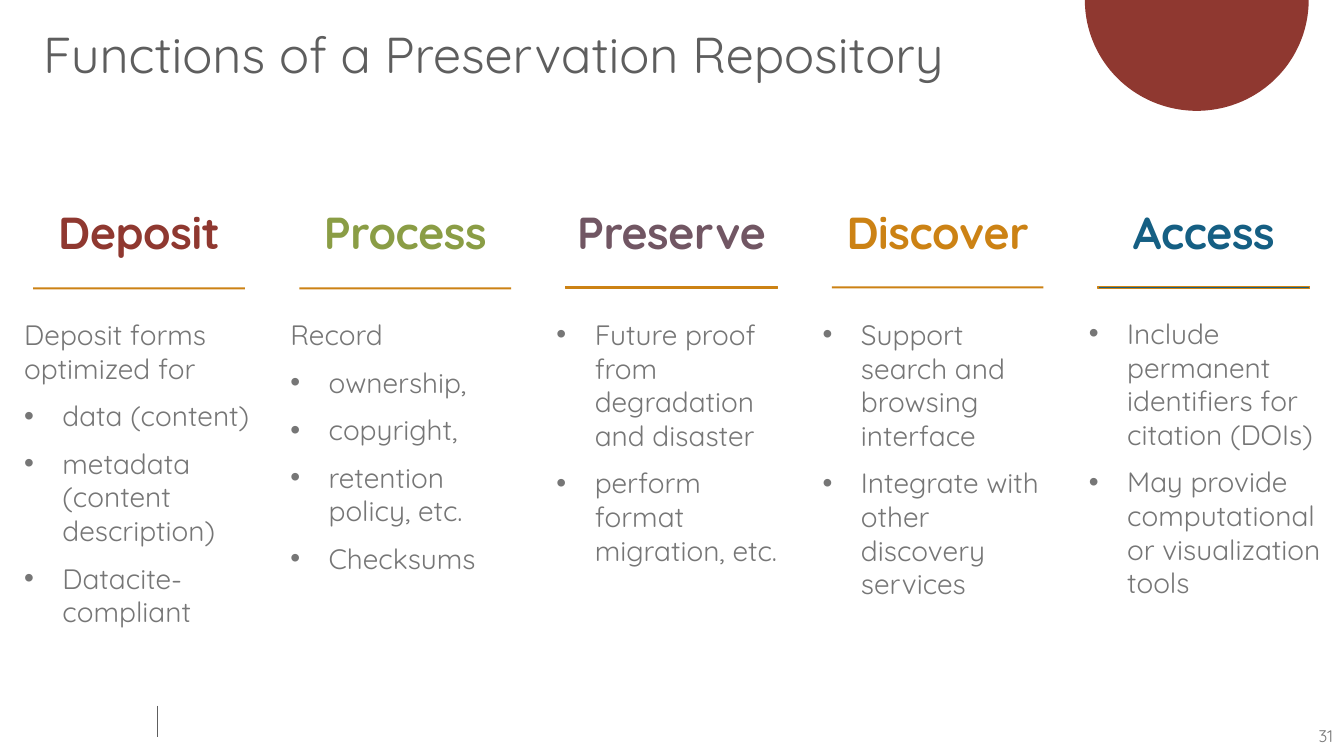
from math import cos, pi, sin

from lxml.etree import SubElement
from pptx import Presentation
from pptx.dml.color import RGBColor
from pptx.enum.shapes import MSO_CONNECTOR, MSO_SHAPE
from pptx.enum.text import MSO_ANCHOR, PP_ALIGN
from pptx.oxml.ns import qn
from pptx.util import Pt

# Content: a leading "•" marks a bulleted line
TITLE = "Functions of a Preservation Repository"
PAGE_NUMBER = "31"
COLUMNS = [
    {"heading": "Deposit", "color": "red", "rule_top": 285, "outlined": False,
     "lines": ["Deposit forms optimized for", "•data (content)",
               "•metadata (content description)", "•Datacite-compliant"]},
    {"heading": "Process", "color": "green", "rule_top": 285, "outlined": False,
     "lines": ["Record", "•ownership,", "•copyright,",
               "•retention policy, etc.", "•Checksums"]},
    {"heading": "Preserve", "color": "plum", "rule_top": 284, "outlined": True,
     "lines": ["•Future proof from degradation and disaster",
               "•perform format migration, etc."]},
    {"heading": "Discover", "color": "orange", "rule_top": 284, "outlined": False,
     "lines": ["•Support search and browsing interface",
               "•Integrate with other discovery services"]},
    {"heading": "Access", "color": "blue", "rule_top": 284, "outlined": True,
     "rule_color": "blue", "body_top": 309, "body_width": 288,
     "lines": ["•Include permanent identifiers for citation (DOIs)",
               "•May provide computational or visualization tools"]},
]

COLORS = {"red": "8F3830", "green": "8A9D45", "plum": "715663", "orange": "CC8214",
          "blue": "155F83", "dark": "5E5E5E", "gray": "767676"}
FONT = "Quicksand"

# Layout in px, 100 to the inch
SCALE = 9144
SLIDE_WIDTH, SLIDE_HEIGHT = 1333, 750
COLUMN_LEFT, COLUMN_STEP, COLUMN_WIDTH = 8, 264, 260
RULE_INSET, RULE_WIDTH, RULE_HEIGHT = 25, 210, 2
BULLET_INDENT = 38


def px(value):
    return round(value * SCALE)


def color(name):
    return RGBColor.from_string(COLORS[name])


def add_bullet(para):
    properties = para._p.get_or_add_pPr()
    properties.set("marL", str(px(BULLET_INDENT)))
    properties.set("indent", str(-px(BULLET_INDENT)))
    SubElement(properties, qn("a:buFont")).set("typeface", "Arial")
    SubElement(properties, qn("a:buChar")).set("char", "•")


def add_text(lines, left, top, width, height, *, size, tint, bold=False, side=10,
             align=PP_ALIGN.LEFT, anchor=MSO_ANCHOR.TOP, wrap=True,
             line_spacing=None, letter_spacing=None):
    box = page.shapes.add_textbox(px(left), px(top), px(width), px(height))
    frame = box.text_frame
    frame.word_wrap = wrap
    frame.vertical_anchor = anchor
    frame.margin_left = frame.margin_right = px(side)
    frame.margin_top = frame.margin_bottom = px(5)
    for index, line in enumerate(lines):
        para = frame.paragraphs[0] if index == 0 else frame.add_paragraph()
        if line.startswith("•"):
            add_bullet(para)
        para.alignment = align
        if line_spacing:
            para.line_spacing = line_spacing
        if index:
            para.space_before = Pt(10)
        span = para.add_run()
        span.text = line.removeprefix("•")
        span.font.name = FONT
        span.font.size = Pt(size)
        span.font.bold = bold
        span.font.color.rgb = color(tint)
        if letter_spacing:
            span.font._element.set("spc", str(letter_spacing))


def paint(shape, fill, outline=None):
    shape.shadow.inherit = False
    shape.fill.solid()
    shape.fill.fore_color.rgb = color(fill)
    if outline:
        shape.line.color.rgb = color(outline)
        shape.line.width = Pt(1)
    else:
        shape.line.fill.background()


deck = Presentation()
deck.slide_width, deck.slide_height = px(SLIDE_WIDTH), px(SLIDE_HEIGHT)
page = deck.slides.add_slide(deck.slide_layouts[6])

# Half disc hanging from the top edge
center_x, radius_x, radius_y, steps = 1187, 111, 110, 90
arc = [(px(center_x + radius_x * cos(pi * step / steps)),
        px(radius_y * sin(pi * step / steps))) for step in range(steps + 1)]
outline = page.shapes.build_freeform(*arc[0])
outline.add_line_segments(arc[1:], close=True)
paint(outline.convert_to_shape(), "red")

# Footer tick and page number
tick = page.shapes.add_connector(MSO_CONNECTOR.STRAIGHT, px(156), px(700), px(156), px(731))
tick.line.color.rgb = color("dark")
tick.line.width = Pt(0.5)
SubElement(tick._element.spPr, qn("a:effectLst"))
add_text([PAGE_NUMBER], 1285, 710, 47, 40, size=12, tint="gray",
         align=PP_ALIGN.RIGHT, anchor=MSO_ANCHOR.MIDDLE, wrap=False)

# Title
add_text([TITLE], 33, 25, 1043, 65, size=36, tint="dark", line_spacing=0.9)

# Columns: heading, rule, body
for number, column in enumerate(COLUMNS):
    left = COLUMN_LEFT + number * COLUMN_STEP
    add_text([column["heading"]], left, 204, COLUMN_WIDTH, 59, size=32,
             tint=column["color"], bold=True, side=16, align=PP_ALIGN.CENTER,
             line_spacing=0.9, letter_spacing=-30)
    rule = page.shapes.add_shape(MSO_SHAPE.RECTANGLE, px(left + RULE_INSET),
                                 px(column["rule_top"]), px(RULE_WIDTH), px(RULE_HEIGHT))
    paint(rule, column.get("rule_color", "orange"),
          "orange" if column["outlined"] else None)
    add_text(column["lines"], left, column.get("body_top", 310),
             column.get("body_width", COLUMN_WIDTH), 340, size=20, tint="gray", side=16)

deck.save("out.pptx")
